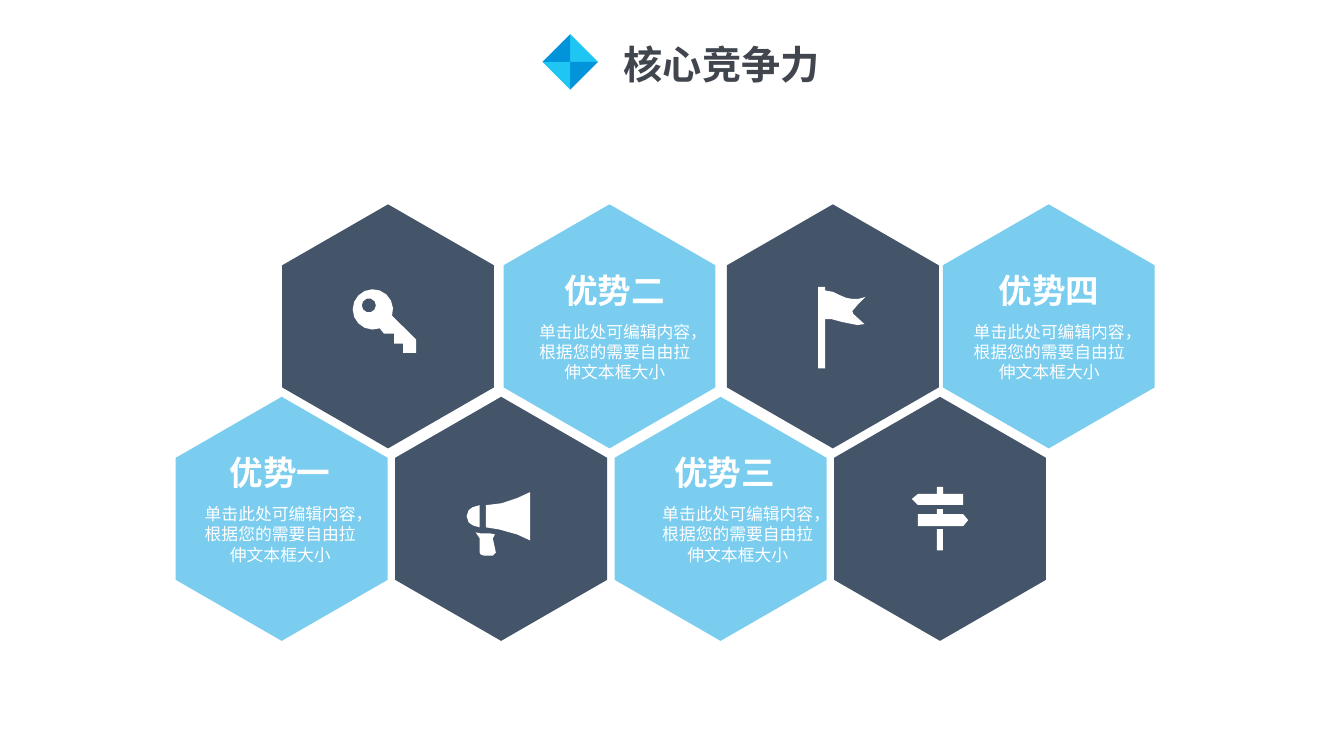
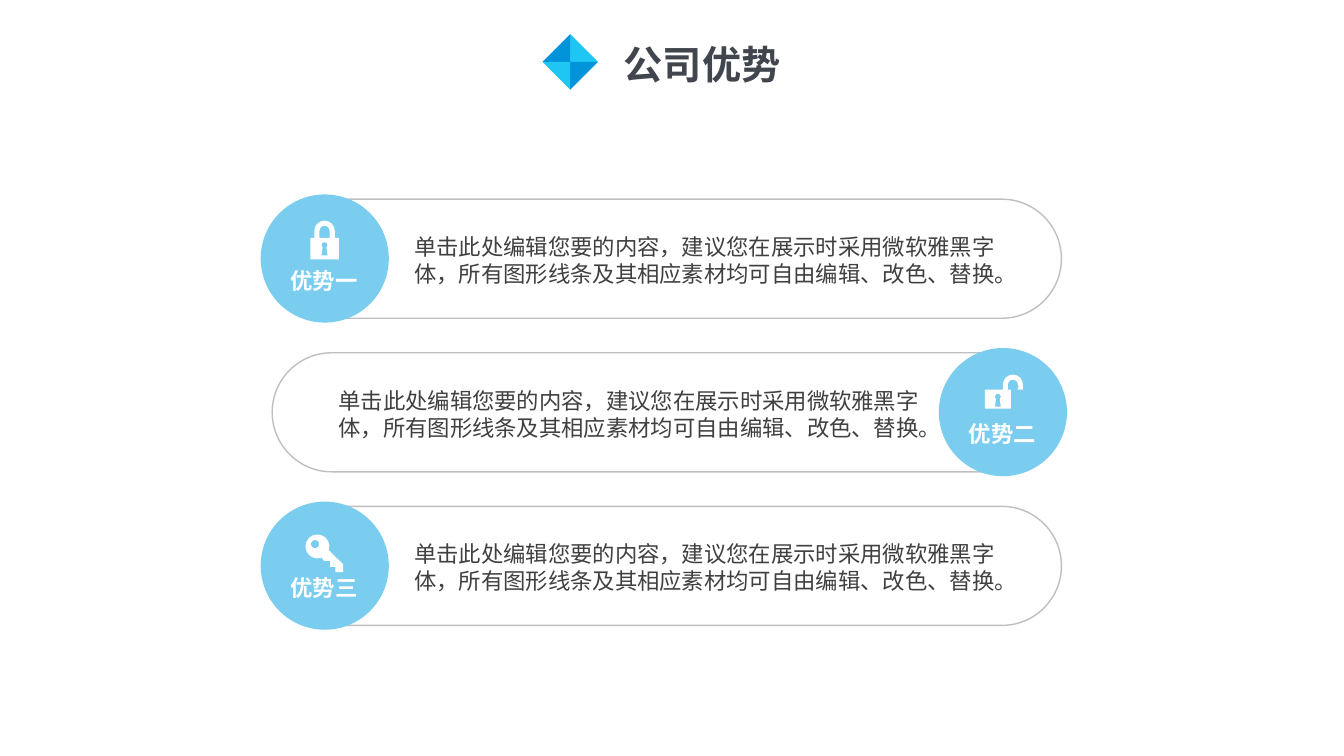
"""Builds two slides on company strengths with hexagons and pills."""
import math

import lxml.etree
import pptx
import pptx.dml.color
import pptx.enum.shapes
import pptx.enum.text
import pptx.oxml.ns
import pptx.util

Cm = pptx.util.Cm
Kind = pptx.enum.shapes.MSO_SHAPE
Align = pptx.enum.text.PP_ALIGN


class Theme:
    """Holds colours, fonts and type styles."""
    dark, light, white = "445469", "7ACDEF", "FFFFFF"
    gem = ("20C6F3", "0194DA")
    edge = "BFBFBF"
    east = "Noto Sans CJK SC"
    lead = 1.2
    type = {
        "title": ("41454E", Align.LEFT, {"size": 28, "bold": True, "name": east}),
        "head": (white, Align.CENTER, {"size": 24, "bold": True, "name": "Arial"}),
        "note": (white, Align.CENTER, {"size": 12, "bold": False, "name": "Arial"}),
        "label": (white, Align.CENTER, {"size": 16, "bold": True, "name": "Arial"}),
        "body": ("404040", Align.LEFT, {"size": 16, "bold": False, "name": east}),
    }
    frame = {"margin_left": 0, "margin_right": 0, "margin_top": 0,
             "margin_bottom": 0, "word_wrap": True}


def arc(x, y, r, start, end, steps):
    """Returns points along an arc, with angles in degrees."""
    turns = [math.radians(start + (end - start) * i / steps) for i in range(steps + 1)]
    return [(x + r * math.cos(t), y + r * math.sin(t)) for t in turns]


def slot(x, y):
    """Returns the outline of a keyhole."""
    return [(x - 3, y + 10), (x - 2, y + 3), *arc(x, y, 3, 130, 410, 6),
            (x + 2, y + 3), (x + 3, y + 10)]


KEY = [[
    [*arc(20, 20, 20, 70, 378, 14), (63, 50), (63, 63), (50, 63), (50, 54),
     (41, 54), (41, 44), (31, 44)],
    arc(16, 16, 7, 0, 360, 10)[:-1],
]]
FLAG = [
    [[(4, 3), (15, 5), (21, 8), (28, 11), (34, 12), (40, 12), (47, 10), (40, 17),
      (34, 24), (35, 27), (46, 37), (39, 38), (24, 35), (13, 32), (4, 32)]],
    (0, 0, 7, 81),
]
HORN = [
    [[(9, 40), (13, 46), (13, 60), (14, 62), (17, 63), (26, 63), (29, 60),
      (26, 46), (28, 42), (23, 41), (14, 41)]],
    [[(19, 35), (32, 37), (50, 42), (63, 48), (63, 0), (50, 6), (35, 11), (19, 13)]],
    [[(13, 13), (6, 15), (2, 18), (0, 24), (2, 30), (6, 33), (13, 35)]],
]
SIGN = [
    (25, 42, 6, 21),
    [[(25, 7), (6, 7), (0, 12), (6, 18), (51, 18), (51, 7), (31, 7), (31, 0), (25, 0)]],
    [[(25, 27), (6, 27), (6, 39), (51, 39), (56, 33), (51, 27), (31, 27),
      (31, 22), (25, 22)]],
]
LOCK = [[
    [(0, 17), (4, 17), *arc(14, 10, 10, 180, 360, 8), (24, 17), (28, 17),
     (28, 38), (0, 38)],
    [(9, 17), *arc(14, 10, 5, 180, 360, 6), (19, 17)],
    slot(14, 24),
]]
OPEN = [[
    [(0, 15), (18, 15), *arc(28, 10, 10, 180, 360, 8), (38, 15), (33, 15), (33, 13),
     (34, 12), *arc(28, 10, 5, 360, 180, 6), (23, 15), (26, 15), (26, 34), (0, 34)],
    slot(13, 22),
]]


class Deck:
    """Holds the style and the slide being drawn."""

    def __init__(self, theme):
        """Starts an empty wide presentation."""
        self.theme = theme
        self.file = pptx.Presentation()
        self.file.slide_width, self.file.slide_height = Cm(33.87), Cm(19.05)
        self.slide = None

    def page(self, title):
        """Adds a slide with its gem and title."""
        self.slide = self.file.slides.add_slide(self.file.slide_layouts[6])
        side = 0.7
        for i, (col, row) in enumerate([(1, 0), (1, 1), (0, 1), (0, 0)]):
            part = self.shape(Kind.RIGHT_TRIANGLE, 13.67 + col * side,
                              0.86 + row * side, side, side, self.theme.gem[i % 2])
            part.rotation = 90 * i
        self.text(title, "title", 15.72, 1.01, 5.36, 1.19)

    def paint(self, shape, fill=None, line=None):
        """Sets fill and line and drops the shadow."""
        shape.shadow.inherit = False
        if fill:
            shape.fill.solid()
            shape.fill.fore_color.rgb = pptx.dml.color.RGBColor.from_string(fill)
        else:
            shape.fill.background()
        if line:
            shape.line.color.rgb = pptx.dml.color.RGBColor.from_string(line)
            shape.line.width = pptx.util.Pt(1)
        else:
            shape.line.fill.background()
        return shape

    def shape(self, kind, x, y, w, h, fill=None, line=None):
        """Adds a preset shape."""
        shape = self.slide.shapes.add_shape(kind, Cm(x), Cm(y), Cm(w), Cm(h))
        return self.paint(shape, fill, line)

    def outline(self, loops, x, y, unit, fill):
        """Adds a filled outline of one or more loops."""
        pen = None
        for loop in loops:
            dots = [(Cm(x + px * unit), Cm(y + py * unit)) for px, py in loop]
            if pen is None:
                pen = self.slide.shapes.build_freeform(*dots[0], scale=1.0)
            else:
                pen.move_to(*dots[0])
            pen.add_line_segments(dots[1:], close=True)
        self.paint(pen.convert_to_shape(), fill)

    def icon(self, parts, x, y, w):
        """Adds a white icon of bars and outlines scaled to a width."""
        unit = w / max(px for part in parts if isinstance(part, list)
                       for loop in part for px, _ in loop)
        for part in parts:
            if isinstance(part, tuple):
                left, top, wide, high = (unit * v for v in part)
                self.shape(Kind.RECTANGLE, x + left, y + top, wide, high,
                           self.theme.white)
            else:
                self.outline(part, x, y, unit, self.theme.white)

    def hexa(self, x, y, fill):
        """Adds an upright hexagon."""
        w, h = 5.34, 6.15
        dots = [(w / 2, 0), (w, h / 4), (w, h * 3 / 4),
                (w / 2, h), (0, h * 3 / 4), (0, h / 4)]
        self.outline([dots], x, y, 1, fill)

    def text(self, words, style, x, y, w, h):
        """Adds a text box in a named style."""
        color, align, form = self.theme.type[style]
        box = self.slide.shapes.add_textbox(Cm(x), Cm(y), Cm(w), Cm(h))
        for name, value in self.theme.frame.items():
            setattr(box.text_frame, name, value)
        para = box.text_frame.paragraphs[0]
        para.alignment = align
        para.line_spacing = pptx.util.Pt(form["size"] * self.theme.lead)
        run = para.add_run()
        run.text = words
        for name, value in {**form, "size": pptx.util.Pt(form["size"])}.items():
            setattr(run.font, name, value)
        run.font.color.rgb = pptx.dml.color.RGBColor.from_string(color)
        lxml.etree.SubElement(run._r.get_or_add_rPr(), pptx.oxml.ns.qn("a:ea"),
                              typeface=self.theme.east)

    def pill(self, top, side, label, icon, spot):
        """Adds a rounded bar with a badge on one side."""
        left, body = {"left": (6.57, 10.44), "right": (23.66, 8.53)}[side]
        bar = self.shape(Kind.ROUNDED_RECTANGLE, 6.86, top, 19.89, 3,
                         line=self.theme.edge)
        bar.adjustments[0] = 0.5
        self.shape(Kind.OVAL, left, top - 0.12, 3.23, 3.23, self.theme.light)
        self.text(label, "label", left + 0.42, top + 1.7, 2.36, 0.69)
        dx, dy, w = spot
        self.icon(icon, left + dx, top + dy, w)
        self.text("单击此处编辑您要的内容，建议您在展示时采用微软雅黑字体，"
                  "所有图形线条及其相应素材均可自由编辑、改色、替换。",
                  "body", body, top + 0.86, 14.86, 1.37)


def main():
    """Draws both slides and saves them."""
    deck = Deck(Theme())
    high, low = 5.15, 10

    deck.page("核心竞争力")
    tops = [(x, high) for x in (7.11, 12.69, 18.32, 23.76)]
    lows = [(4.43 + 5.53 * i, low) for i in range(4)]
    for x, y in tops[::2] + lows[1::2]:
        deck.hexa(x, y, Theme.dark)
    for x, y in lows[::2] + tops[1::2]:
        deck.hexa(x, y, Theme.light)
    for icon, x, y, w in [(SIGN, 22.98, 12.27, 1.42), (FLAG, 20.62, 7.23, 1.19),
                          (KEY, 8.89, 7.29, 1.6), (HORN, 11.76, 12.4, 1.6)]:
        deck.icon(icon, x, y, w)
    for head, mid, shift, top in [("优势一", 7.06, 0, 11.4), ("优势三", 18.26, 0.33, 11.4),
                                  ("优势四", 26.44, 0, 6.8), ("优势二", 15.49, 0, 6.8)]:
        deck.text(head, "head", mid - 3.25, top, 6.5, 1.02)
        deck.text("单击此处可编辑内容，根据您的需要自由拉伸文本框大小",
                  "note", mid + shift - 1.95, top + 1.3, 3.91, 1.55)

    deck.page("公司优势")
    rows = [("left", "优势一", LOCK, (1.25, 0.54, 0.72)),
            ("right", "优势二", OPEN, (1.16, 0.55, 0.96)),
            ("left", "优势三", KEY, (1.13, 0.71, 0.95))]
    for i, row in enumerate(rows):
        deck.pill(5.02 + 3.87 * i, *row)

    deck.file.save("out.pptx")


if __name__ == "__main__":
    main()
